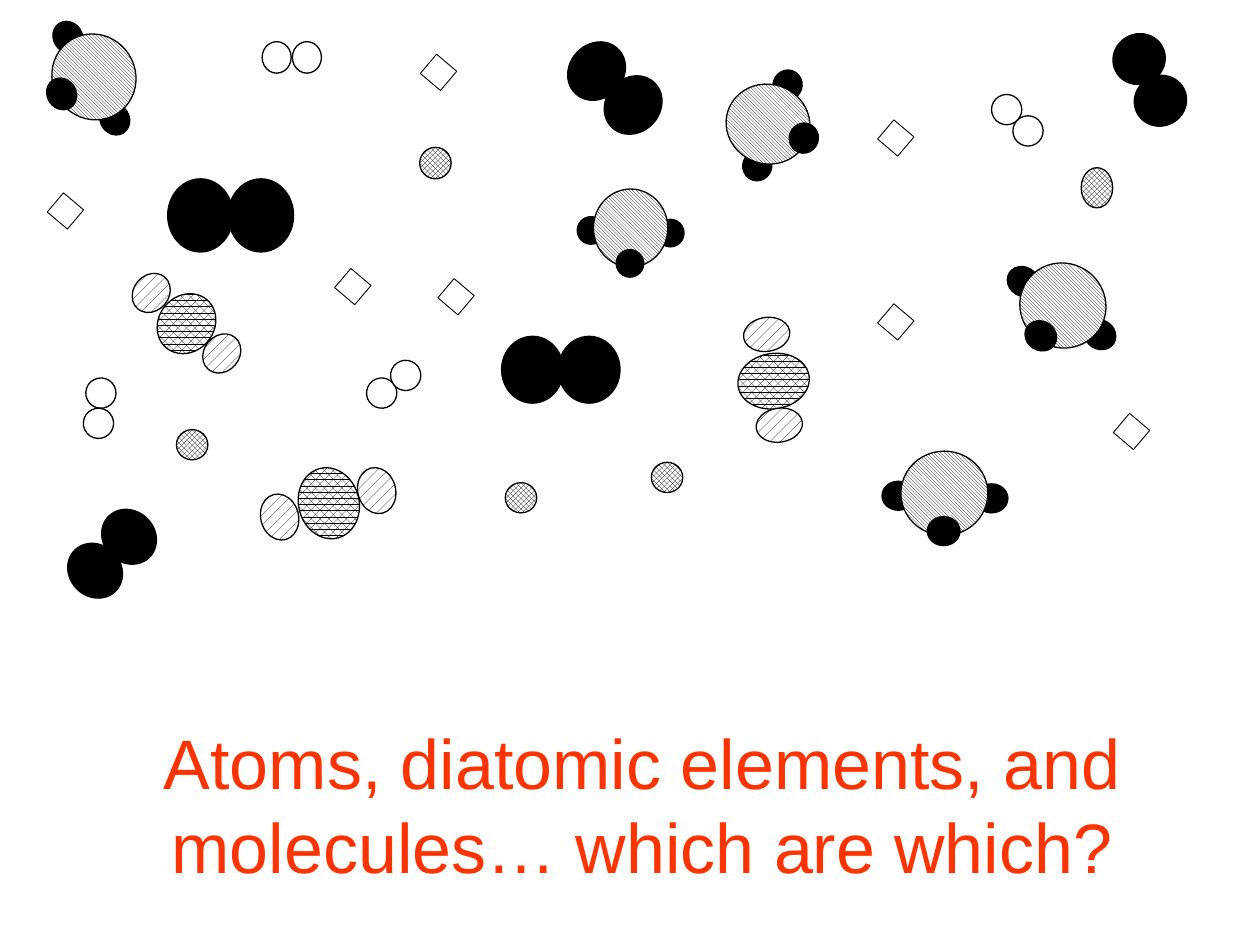
import pptx
import pptx.dml.color
import pptx.enum.dml
import pptx.enum.shapes
import pptx.enum.text
import pptx.util

BLACK = pptx.dml.color.RGBColor(0, 0, 0)
WHITE = pptx.dml.color.RGBColor(255, 255, 255)
ORANGE_RED = pptx.dml.color.RGBColor(255, 51, 0)

PATTERN = pptx.enum.dml.MSO_PATTERN
ELLIPSE = pptx.enum.shapes.MSO_SHAPE.OVAL
RECTANGLE = pptx.enum.shapes.MSO_SHAPE.RECTANGLE
Pt = pptx.util.Pt

BLACK_PAIRS = [
    ((95.8, 102.2), (37.4, 41.8), 0, (34.6, 0)),
    ((39.6, 309.6), (29.5, 33.1), 315.2, (19.4, -19.4)),
    ((325.4, 23), (31, 35.3), 42.7, (20.9, 19.4)),
    ((636.5, 18.7), (28.8, 30.2), 62.8, (12.2, 23.8)),
    ((286.6, 192.2), (35.3, 38.2), 0, (32.4, 0)),
]
WHITE_PAIRS = [
    ((209.5, 216), (17.3, 17.3), 324.7, (13.7, -10.1)),
    ((149.8, 23.8), (16.6, 18), 0, (17.3, 0)),
    ((49, 216), (17.3, 17.3), 94.1, (-1.4, 17.3)),
    ((566.6, 54), (17.3, 17.3), 44, (12.2, 12.2)),
]
THREE_ATOM_MOLECULES = [
    (345.1, (170.6, 267.1), (34.6, 41), (21.6, 26.6), [(204.5, 267.1), (149, 282.2)]),
    (81.6, (426.2, 197.3), (31.7, 41), (19.4, 26.6), [(435.6, 229.7), (428.4, 177.8)]),
    (40.2, (90.7, 167), (31.7, 36), (20.2, 23.8), [(116.6, 190.1), (76.3, 155.5)]),
]
FOUR_ATOM_MOLECULES = [
    (57.9, (28.8, 20.2), (49.7, 47.5), (18.7, 16.6),
     [(56.2, 59.8), (29.5, 13)], (25.9, 45.4)),
    (0, (514.8, 257.8), (49.7, 48.2), (18.7, 16.6),
     [(557.3, 276.5), (504, 275)], (529.9, 295.2)),
    (0, (339.1, 108), (42.5, 44.6), (15.8, 15.8),
     [(375.1, 125.3), (329.8, 123.8)], (352.1, 142.6)),
    (33, (582.5, 150.5), (49.7, 48.2), (18.7, 16.6),
     [(619.2, 182.9), (575.3, 152.6)], (585.4, 183.6)),
    (288.5, (416.2, 46.8), (45.4, 48.2), (17.3, 16.6),
     [(441.4, 40.3), (424.1, 86.4)], (450.7, 70.6)),
]
SINGLE_ATOMS = [
    ((288.7, 275.8), (18, 17.3)),
    ((617.8, 95.8), (18, 23)),
    ((372.2, 264.2), (18, 17.3)),
    ((100.8, 245.5), (18, 17.3)),
    ((239.8, 84.2), (18, 18)),
]
DIAMONDS = [
    (243.4, 33.8), (253.4, 162), (194.4, 156.2), (504.7, 176.4),
    (639.4, 239), (504.7, 71.3), (30.2, 113),
]


def add_atom(shapes, place, size, fill, rotation=0, kind=ELLIPSE, line_width=0.75):
    atom = shapes.add_shape(kind, *(Pt(length) for length in place + size))
    atom.rotation = rotation
    atom.shadow.inherit = False
    if isinstance(fill, pptx.dml.color.RGBColor):
        atom.fill.solid()
        atom.fill.fore_color.rgb = fill
    else:
        atom.fill.patterned()
        atom.fill.pattern = fill
        atom.fill.fore_color.rgb = BLACK
        atom.fill.back_color.rgb = WHITE
    atom.line.color.rgb = BLACK
    atom.line.width = Pt(line_width)


def add_pair(page, fill, place, size, rotation, step):
    group = page.shapes.add_group_shape()
    second = (place[0] + step[0], place[1] + step[1])
    for spot in (place, second):
        add_atom(group.shapes, spot, size, fill, rotation)


def add_three_atom_molecule(page, rotation, core, core_size, outer_size, outer):
    group = page.shapes.add_group_shape()
    add_atom(group.shapes, core, core_size, PATTERN.PERCENT_70, rotation)
    for spot in outer:
        add_atom(group.shapes, spot, outer_size, PATTERN.PERCENT_20, rotation)


def add_four_atom_molecule(page, rotation, core, core_size, outer_size, back, front):
    group = page.shapes.add_group_shape()
    for spot in back:
        add_atom(group.shapes, spot, outer_size, BLACK, rotation)
    add_atom(group.shapes, core, core_size, PATTERN.LIGHT_DOWNWARD_DIAGONAL, rotation)
    add_atom(group.shapes, front, outer_size, BLACK, rotation)


def fill_title(page, text):
    title = page.shapes.title
    title.left, title.top = Pt(51.8), Pt(407.5)
    title.width, title.height = Pt(630), Pt(103)
    frame = title.text_frame
    frame.text = text
    frame.word_wrap = True
    frame.auto_size = pptx.enum.text.MSO_AUTO_SIZE.SHAPE_TO_FIT_TEXT
    frame.vertical_anchor = pptx.enum.text.MSO_ANCHOR.MIDDLE
    para = frame.paragraphs[0]
    para.alignment = pptx.enum.text.PP_ALIGN.CENTER
    span = para.runs[0]
    span.font.name = "Arial"
    span.font.size = Pt(40)
    span.font.color.rgb = ORANGE_RED


def main():
    deck = pptx.Presentation()
    deck.slide_width, deck.slide_height = Pt(720), Pt(540)
    page = deck.slides.add_slide(deck.slide_layouts.get_by_name("Title Only"))
    fill_title(page, "Atoms, diatomic elements, and molecules… which are which?")
    for pair in BLACK_PAIRS:
        add_pair(page, BLACK, *pair)
    for molecule in THREE_ATOM_MOLECULES:
        add_three_atom_molecule(page, *molecule)
    for place, size in SINGLE_ATOMS:
        add_atom(page.shapes, place, size, PATTERN.TRELLIS)
    for pair in WHITE_PAIRS:
        add_pair(page, WHITE, *pair)
    for molecule in FOUR_ATOM_MOLECULES:
        add_four_atom_molecule(page, *molecule)
    for place in DIAMONDS:
        add_atom(page.shapes, place, (14.4, 15.1), WHITE, 310.3, RECTANGLE, 0.5)
    deck.save("out.pptx")


if __name__ == "__main__":
    main()
